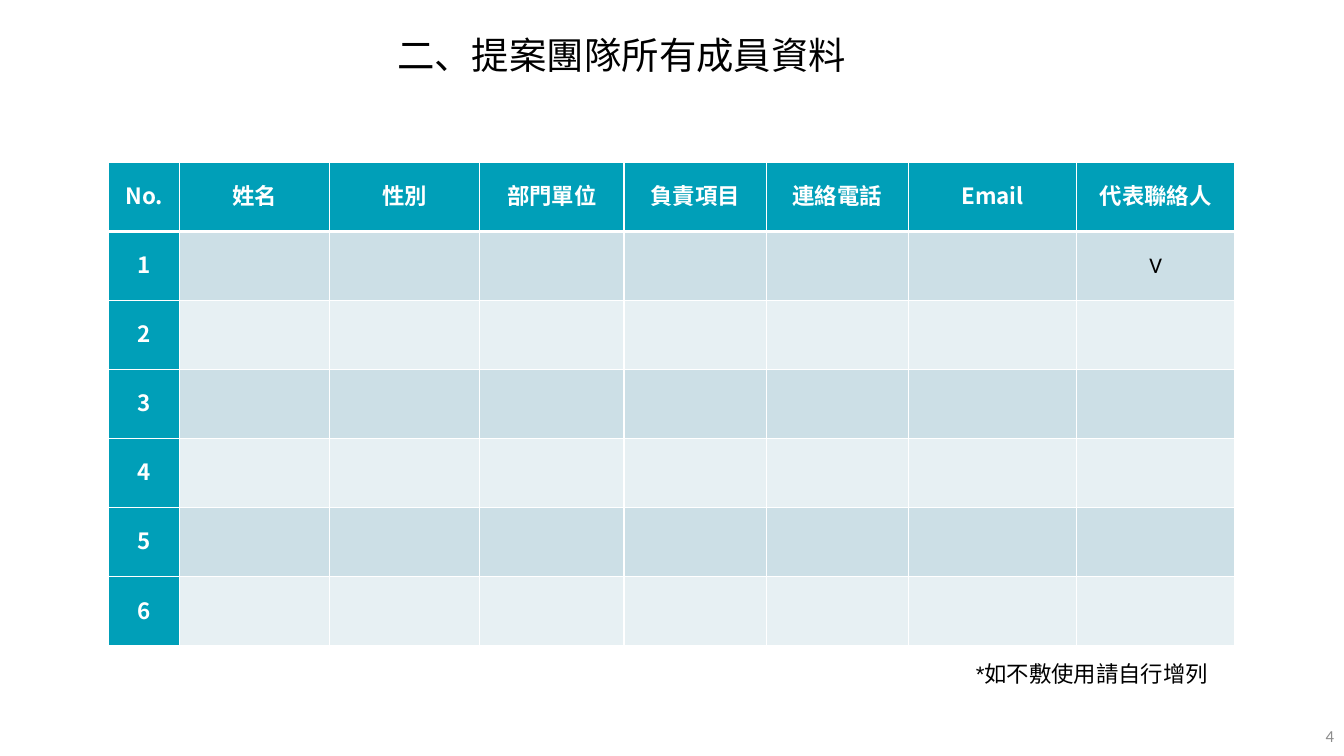
from pptx import Presentation
from pptx.dml.color import RGBColor
from pptx.enum.shapes import MSO_SHAPE
from pptx.enum.text import MSO_ANCHOR, PP_ALIGN
from pptx.oxml import parse_xml
from pptx.oxml.ns import nsdecls
from pptx.util import Inches, Pt

COLORS = {"teal": "009FB8", "band": "CCDFE6", "light": "E7F0F3",
          "white": "FFFFFF", "black": "000000", "gray": "8C8C8C"}
CJK = "Noto Sans CJK SC"


def write(tf, text, size, font, color, align, bold=False):
    tf.text = text
    p = tf.paragraphs[0]
    p.alignment = align
    r = p.runs[0]
    r.font.size = Pt(size)
    r.font.name = font
    r.font.bold = bold
    r.font.color.rgb = RGBColor.from_string(COLORS[color])
    r.font._element.find("{*}latin").addnext(
        parse_xml(f'<a:ea {nsdecls("a")} typeface="{CJK}"/>'))


def fill_cell(cell, color, widths):
    tcPr = cell._tc.get_or_add_tcPr()
    for side, width in widths.items():
        tcPr.append(parse_xml(
            f'<a:{side} {nsdecls("a")} w="{Pt(width)}"><a:solidFill>'
            f'<a:srgbClr val="{COLORS["white"]}"/></a:solidFill></a:{side}>'))
    cell.fill.solid()
    cell.fill.fore_color.rgb = RGBColor.from_string(COLORS[color])


prs = Presentation()
prs.slide_width = Inches(13.33)
prs.slide_height = Inches(7.5)
s = prs.slides.add_slide(prs.slide_layouts[6])

title = s.shapes.add_textbox(Inches(3.84), Inches(0.27), Inches(4.81), Inches(0.55))
title.text_frame.word_wrap = True
write(title.text_frame, "二、提案團隊所有成員資料", 26.7, CJK, "black", PP_ALIGN.LEFT)

headers = ["No.", "姓名", "性別", "部門單位", "負責項目", "連絡電話", "Email", "代表聯絡人"]
col_widths = [0.7, 1.49, 1.49, 1.43, 1.41, 1.41, 1.67, 1.57]
members = 6
rows = [headers] + [[str(n)] + [""] * 7 for n in range(1, members + 1)]
rows[1][-1] = "V"

table = s.shapes.add_table(len(rows), len(headers), Inches(1.08), Inches(1.61),
                           Inches(11.17), Inches(4.8)).table
table.first_col = True
for col, width in zip(table.columns, col_widths):
    col.width = Inches(width)

for i, row in enumerate(rows):
    table.rows[i].height = Inches(4.8 / len(rows))
    widths = {"lnL": 1, "lnR": 1, "lnT": 3 if i == 1 else 1, "lnB": 3 if i == 0 else 1}
    for j, text in enumerate(row):
        cell = table.cell(i, j)
        heading = i == 0 or j == 0
        fill_cell(cell, "teal" if heading else "band" if i % 2 else "light", widths)
        cell.vertical_anchor = MSO_ANCHOR.MIDDLE
        cell.margin_top = cell.margin_bottom = 0
        if text:
            write(cell.text_frame, text, 16, CJK if heading else "Calibri",
                  "white" if heading else "black", PP_ALIGN.CENTER, heading)
            cell.text_frame.paragraphs[0].line_spacing = Pt(20)

number = s.shapes.add_textbox(Inches(10.33), Inches(7.1), Inches(3), Inches(0.4))
number.text_frame.word_wrap = True
number.text_frame.vertical_anchor = MSO_ANCHOR.MIDDLE
write(number.text_frame, "4", 12, "Calibri", "gray", PP_ALIGN.RIGHT)

note = s.shapes.add_shape(MSO_SHAPE.RECTANGLE, Inches(9.41), Inches(6.55),
                          Inches(2.84), Inches(0.27))
note.shadow.inherit = False
note.fill.solid()
note.fill.fore_color.rgb = RGBColor.from_string(COLORS["white"])
note.line.fill.background()
tf = note.text_frame
tf.word_wrap = True
tf.vertical_anchor = MSO_ANCHOR.MIDDLE
tf.margin_left = tf.margin_right = tf.margin_top = tf.margin_bottom = 0
write(tf, "*如不敷使用請自行增列", 16, "Arial", "black", PP_ALIGN.CENTER)

prs.save("out.pptx")
